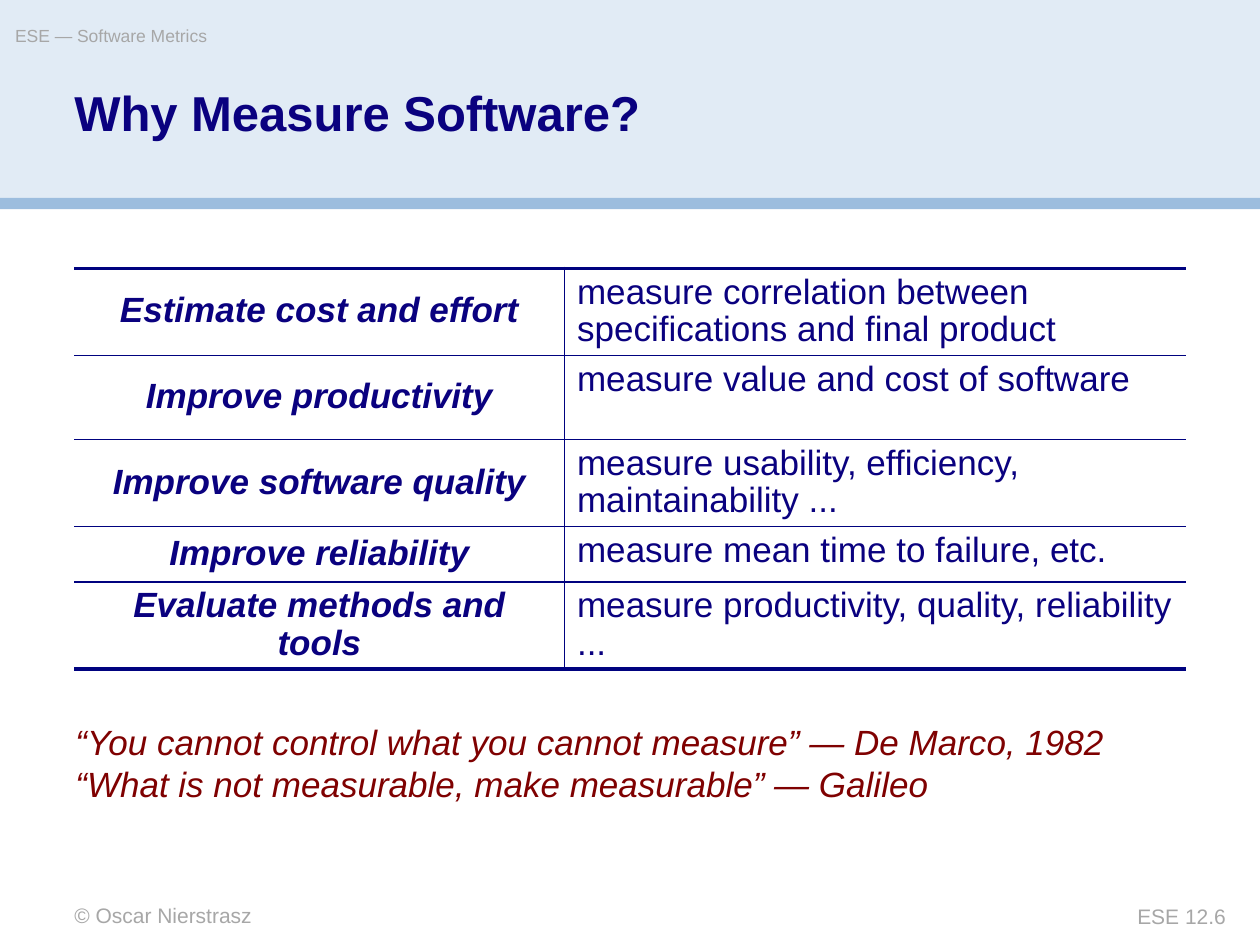
import dataclasses

import pptx
import pptx.dml.color
import pptx.enum.shapes
import pptx.enum.text
import pptx.oxml
import pptx.oxml.ns
import pptx.util

Inches = pptx.util.Inches
Pt = pptx.util.Pt
ALIGN = pptx.enum.text.PP_ALIGN
ANCHOR = pptx.enum.text.MSO_ANCHOR


@dataclasses.dataclass(frozen=True)
class Theme:
    font: str = "Arial"
    header: str = "E1EBF5"
    stripe: str = "9CBDDE"
    navy: str = "0A017F"
    rule: str = "00027F"
    quote: str = "7F0101"
    grey: str = "A7A7A7"
    title_size: int = 28
    body_size: int = 20
    footer_size: int = 12
    course_size: int = 10
    thin: float = 1
    thick: float = 2.25


THEME = Theme()

REASONS = [
    ("Estimate cost and effort", "measure correlation between specifications and final product"),
    ("Improve productivity", "measure value and cost of software"),
    ("Improve software quality", "measure usability, efficiency, maintainability ..."),
    ("Improve reliability", "measure mean time to failure, etc."),
    ("Evaluate methods and tools", "measure productivity, quality, reliability ..."),
]
COLUMN_WIDTHS = (3.89, 4.93)
ROW_HEIGHTS = (0.69, 0.67, 0.69, 0.44, 0.69)
QUOTES = [
    "“You cannot control what you cannot measure” — De Marco, 1982",
    "“What is not measurable, make measurable” — Galileo",
]


def rgb(value):
    return pptx.dml.color.RGBColor.from_string(value)


def add_run(p, text, size, color, bold=False, italic=False):
    r = p.add_run()
    r.text = text
    r.font.name = THEME.font
    r.font.size = Pt(size)
    r.font.color.rgb = rgb(color)
    r.font.bold = bold
    r.font.italic = italic


def clear_margins(tf):
    tf.margin_left = tf.margin_top = tf.margin_right = tf.margin_bottom = 0


def add_band(s, top, height, color):
    sp = s.shapes.add_shape(pptx.enum.shapes.MSO_SHAPE.RECTANGLE,
                            0, Inches(top), Inches(10), Inches(height))
    sp.shadow.inherit = False
    sp.fill.solid()
    sp.fill.fore_color.rgb = rgb(color)
    sp.line.fill.background()


def add_label(s, box, text, size, align=ALIGN.LEFT, wrap=True):
    tf = s.shapes.add_textbox(*map(Inches, box)).text_frame
    clear_margins(tf)
    tf.word_wrap = wrap
    tf.paragraphs[0].alignment = align
    add_run(tf.paragraphs[0], text, size, THEME.grey)


def set_title(s, text):
    title = s.shapes.title
    title.left, title.top = Inches(0.59), Inches(0.71)
    title.width, title.height = Inches(7.24), Inches(0.89)
    title.element.getparent().append(title.element)  # in front of the header band
    tf = title.text_frame
    clear_margins(tf)
    tf.vertical_anchor = ANCHOR.TOP
    p = tf.paragraphs[0]
    p.alignment = ALIGN.LEFT
    p.line_spacing = 0.9
    add_run(p, text, THEME.title_size, THEME.navy, bold=True)


def set_borders(cell, **widths):
    """Draw the sides named L, R, T, B at the given point widths; hide the rest."""
    tc_pr = cell._tc.get_or_add_tcPr()
    for index, side in enumerate("LRTB"):
        width = widths.get(side, 0)
        paint = (f'<a:solidFill><a:srgbClr val="{THEME.rule}"/></a:solidFill>'
                 if width else "<a:noFill/>")
        tc_pr.insert(index, pptx.oxml.parse_xml(
            f'<a:ln{side} {pptx.oxml.ns.nsdecls("a")} w="{int(Pt(width))}">{paint}</a:ln{side}>'))


def fill_cell(cell, text, is_reason):
    p = cell.text_frame.paragraphs[0]
    p.line_spacing = 0.95
    p.space_before = Pt(4)
    before = p._p.pPr.find(pptx.oxml.ns.qn("a:spcBef"))
    before.replace(before[0], pptx.oxml.parse_xml(
        f'<a:spcPct {pptx.oxml.ns.nsdecls("a")} val="20000"/>'))
    p.alignment = ALIGN.CENTER if is_reason else ALIGN.LEFT
    cell.vertical_anchor = ANCHOR.MIDDLE if is_reason else ANCHOR.TOP
    add_run(p, text, THEME.body_size, THEME.navy, bold=is_reason, italic=is_reason)
    cell.fill.background()


def add_reason_table(s):
    table = s.shapes.add_table(
        len(REASONS), len(COLUMN_WIDTHS), Inches(0.59), Inches(2.13),
        Inches(sum(COLUMN_WIDTHS)), Inches(sum(ROW_HEIGHTS))).table
    table.first_row = table.horz_banding = False
    for column, width in zip(table.columns, COLUMN_WIDTHS):
        column.width = Inches(width)
    last = len(REASONS) - 1
    for i, texts in enumerate(REASONS):
        table.rows[i].height = Inches(ROW_HEIGHTS[i])
        for j, text in enumerate(texts):
            cell = table.cell(i, j)
            fill_cell(cell, text, is_reason=j == 0)
            divider = "R" if j == 0 else "L"
            set_borders(cell, **{
                divider: THEME.thin,
                "T": THEME.thick if i == 0 else THEME.thin,
                "B": THEME.thick if i == last else THEME.thin,
            })


def add_quotes(s):
    tf = s.shapes.add_textbox(Inches(0.5), Inches(5.67), Inches(9), Inches(0.77)).text_frame
    tf.word_wrap = True
    tf.auto_size = pptx.enum.text.MSO_AUTO_SIZE.SHAPE_TO_FIT_TEXT
    for i, quote in enumerate(QUOTES):
        p = tf.add_paragraph() if i else tf.paragraphs[0]
        add_run(p, quote, THEME.body_size, THEME.quote, italic=True)


def main():
    prs = pptx.Presentation()
    prs.slide_width, prs.slide_height = Inches(10), Inches(7.5)
    s = prs.slides.add_slide(prs.slide_layouts[5])
    add_band(s, 0, 1.58, THEME.header)
    add_band(s, 1.57, 0.09, THEME.stripe)
    add_label(s, (0.59, 7.16, 4.17, 0.2), "© Oscar Nierstrasz", THEME.footer_size)
    add_label(s, (0.12, 0.2, 5.9, 0.28), "ESE — Software Metrics", THEME.course_size, wrap=False)
    add_label(s, (8.25, 7.17, 1.48, 0.2), "ESE 12.6", THEME.footer_size, ALIGN.RIGHT)
    set_title(s, "Why Measure Software?")
    add_reason_table(s)
    add_quotes(s)
    prs.save("out.pptx")


if __name__ == "__main__":
    main()
